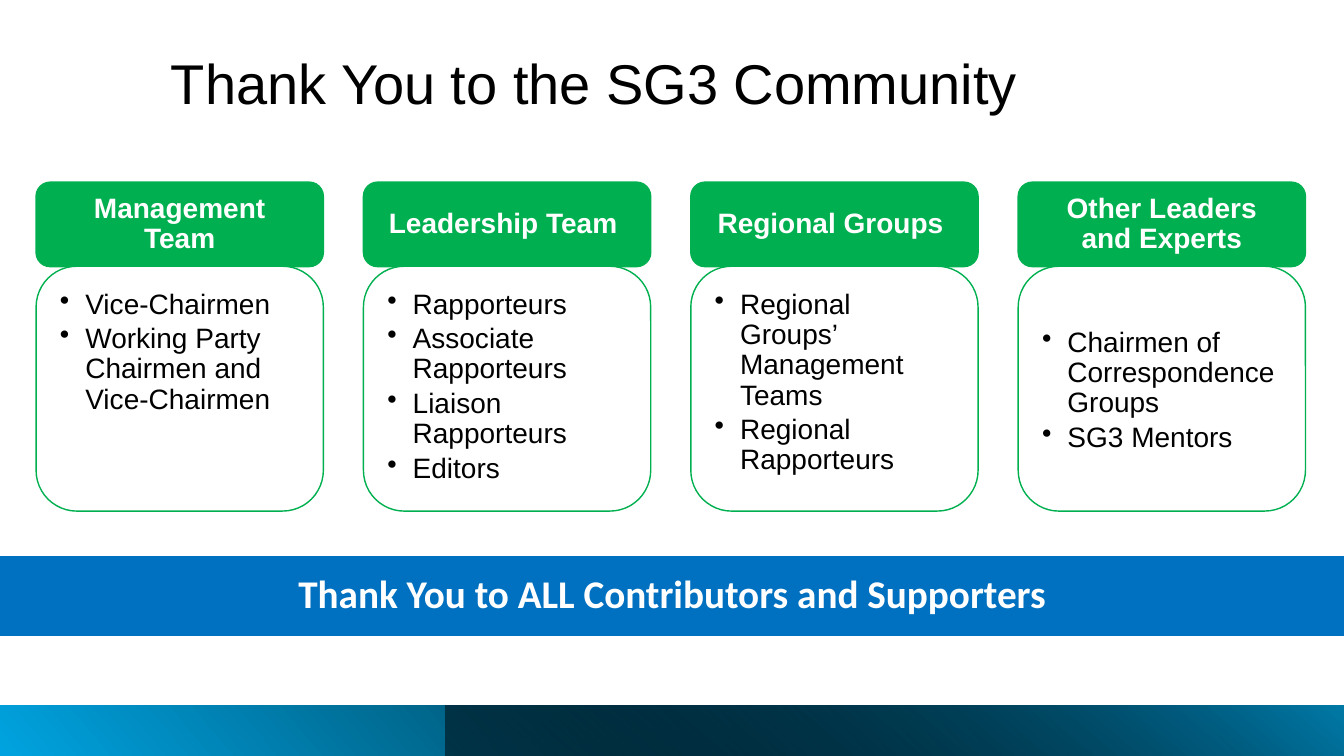
from dataclasses import dataclass
from lxml.etree import SubElement
from pptx import Presentation
from pptx.dml.color import RGBColor
from pptx.enum.shapes import MSO_SHAPE
from pptx.enum.text import MSO_ANCHOR, PP_ALIGN
from pptx.oxml import parse_xml
from pptx.oxml.ns import nsdecls, qn
from pptx.shapes.autoshape import Shape
from pptx.slide import Slide
from pptx.util import Cm, Pt


@dataclass(frozen=True)
class Theme:
    green: str = "00B050"
    blue: str = "0070C0"
    white: str = "FFFFFF"
    black: str = "000000"
    sky: str = "00A3E0"
    teal: str = "007AA8"
    sans: str = "Arial"
    accent: str = "Calibri"
    title: int = 40
    banner: int = 28
    body: int = 20


@dataclass(frozen=True)
class Box:
    left: float
    top: float
    width: float
    height: float

    def emu(self) -> tuple[Cm, Cm, Cm, Cm]:
        return Cm(self.left), Cm(self.top), Cm(self.width), Cm(self.height)


@dataclass(frozen=True)
class Card:
    head: str
    items: tuple[str, ...]
    drop: float = 0.0  # extra space above the list


@dataclass(frozen=True)
class Stop:
    at: int
    color: str
    alpha: int = 100


THEME = Theme()
WIDE, HIGH = 33.87, 19.05
LEFT, PITCH, WIDTH = 0.91, 8.25, 7.24
CARDS = (
    Card("Management Team",
         ("Vice-Chairmen", "Working Party Chairmen and Vice-Chairmen")),
    Card("Leadership Team ",
         ("Rapporteurs", "Associate Rapporteurs", "Liaison Rapporteurs", "Editors")),
    Card("Regional Groups ",
         ("Regional Groups’ Management Teams", "Regional Rapporteurs")),
    Card("Other Leaders and Experts",
         ("Chairmen of Correspondence Groups", "SG3 Mentors"), 0.96),
)


def add_box(slide: Slide, kind: MSO_SHAPE, box: Box, fill: str, line: str,
            weight: float) -> Shape:
    shape = slide.shapes.add_shape(kind, *box.emu())
    shape.shadow.inherit = False
    shape.fill.solid()
    shape.fill.fore_color.rgb = RGBColor.from_string(fill)
    shape.line.color.rgb = RGBColor.from_string(line)
    shape.line.width = Pt(weight)
    return shape


def set_frame(shape: Shape, anchor: MSO_ANCHOR,
              pads: tuple[float, float, float, float]) -> None:
    frame = shape.text_frame
    form = {"word_wrap": True, "vertical_anchor": anchor}
    sides = ("left", "top", "right", "bottom")
    form |= {f"margin_{side}": Cm(pad) for side, pad in zip(sides, pads)}
    for name, value in form.items():
        setattr(frame, name, value)


def write(shape: Shape, lines: tuple[str, ...], size: int, color: str,
          font: str = THEME.sans, bold: bool = False,
          align: PP_ALIGN = PP_ALIGN.LEFT, after: float = 0,
          indent: float = 0, bullet: bool = False) -> None:
    frame = shape.text_frame
    for i, line in enumerate(lines):
        para = frame.add_paragraph() if i else frame.paragraphs[0]
        form = {"alignment": align, "line_spacing": 0.9, "space_after": Pt(after)}
        for name, value in form.items():
            setattr(para, name, value)
        props = para._p.get_or_add_pPr()
        props.set("marL", str(Cm(indent)))
        props.set("indent", str(-Cm(indent) if bullet else 0))
        if bullet:
            SubElement(props, qn("a:buChar")).set("char", "•")
        run = para.add_run()
        run.text = line
        for name, value in {"size": Pt(size), "name": font, "bold": bold}.items():
            setattr(run.font, name, value)
        run.font.color.rgb = RGBColor.from_string(color)


def add_strip(slide: Slide, box: Box, stops: tuple[Stop, ...], angle: int,
              turn: int = 0) -> None:
    strip = add_box(slide, MSO_SHAPE.RECTANGLE, box, THEME.white, THEME.white, 1)
    strip.line.fill.background()
    strip.rotation = turn
    props = strip._element.spPr
    props.find(qn("a:xfrm")).set("flipH", "1")
    marks = "".join(
        f'<a:gs pos="{stop.at * 1000}"><a:srgbClr val="{stop.color}">'
        f'<a:alpha val="{stop.alpha * 1000}"/></a:srgbClr></a:gs>'
        for stop in stops)
    grad = parse_xml(
        f'<a:gradFill {nsdecls("a")} rotWithShape="1"><a:gsLst>{marks}</a:gsLst>'
        f'<a:lin ang="{angle * 60000}" scaled="0"/></a:gradFill>')
    props.replace(props.find(qn("a:solidFill")), grad)


def add_card(slide: Slide, card: Card, left: float) -> None:
    head = add_box(slide, MSO_SHAPE.ROUNDED_RECTANGLE,
                   Box(left, 4.59, WIDTH, 2.13), THEME.green, THEME.green, 1)
    set_frame(head, MSO_ANCHOR.MIDDLE, (0.41, 0.23, 0.41, 0.23))
    write(head, (card.head,), THEME.body, THEME.white, bold=True,
          align=PP_ALIGN.CENTER)
    body = add_box(slide, MSO_SHAPE.ROUNDED_RECTANGLE,
                   Box(left, 6.71, WIDTH, 6.17), THEME.white, THEME.green, 1)
    set_frame(body, MSO_ANCHOR.TOP, (0.3, 0.3 + card.drop, 0.41, 0.43))
    write(body, card.items, THEME.body, THEME.black, after=3, indent=0.64,
          bullet=True)


def main() -> None:
    deck = Presentation()
    deck.slide_width, deck.slide_height = Cm(WIDE), Cm(HIGH)
    slide = deck.slides.add_slide(deck.slide_layouts[6])

    # Title
    title = slide.shapes.add_textbox(*Box(3.81, 1.17, 29.13, 1.9).emu())
    set_frame(title, MSO_ANCHOR.BOTTOM, (0.25, 0.13, 0.25, 0.13))
    write(title, ("Thank You to the SG3 Community",), THEME.title, THEME.black,
          after=6, indent=0.25)

    # Footer strips
    add_strip(slide, Box(0, 17.78, WIDE, 1.27),
              (Stop(0, THEME.sky), Stop(90, THEME.black)), 40, 180)
    add_strip(slide, Box(11.22, 17.78, WIDE - 11.22, 1.27),
              (Stop(0, THEME.black, 50), Stop(100, THEME.teal)), 230)

    # Team cards
    for i, card in enumerate(CARDS):
        add_card(slide, card, LEFT + i * PITCH)

    # Banner
    banner = add_box(slide, MSO_SHAPE.RECTANGLE, Box(0, 14.05, WIDE, 1.95),
                     THEME.blue, THEME.blue, 1.5)
    set_frame(banner, MSO_ANCHOR.MIDDLE, (0.25, 0.13, 0.25, 0.13))
    write(banner, ("Thank You to ALL Contributors and Supporters",),
          THEME.banner, THEME.white, THEME.accent, True, PP_ALIGN.CENTER)

    deck.save("out.pptx")


if __name__ == "__main__":
    main()
